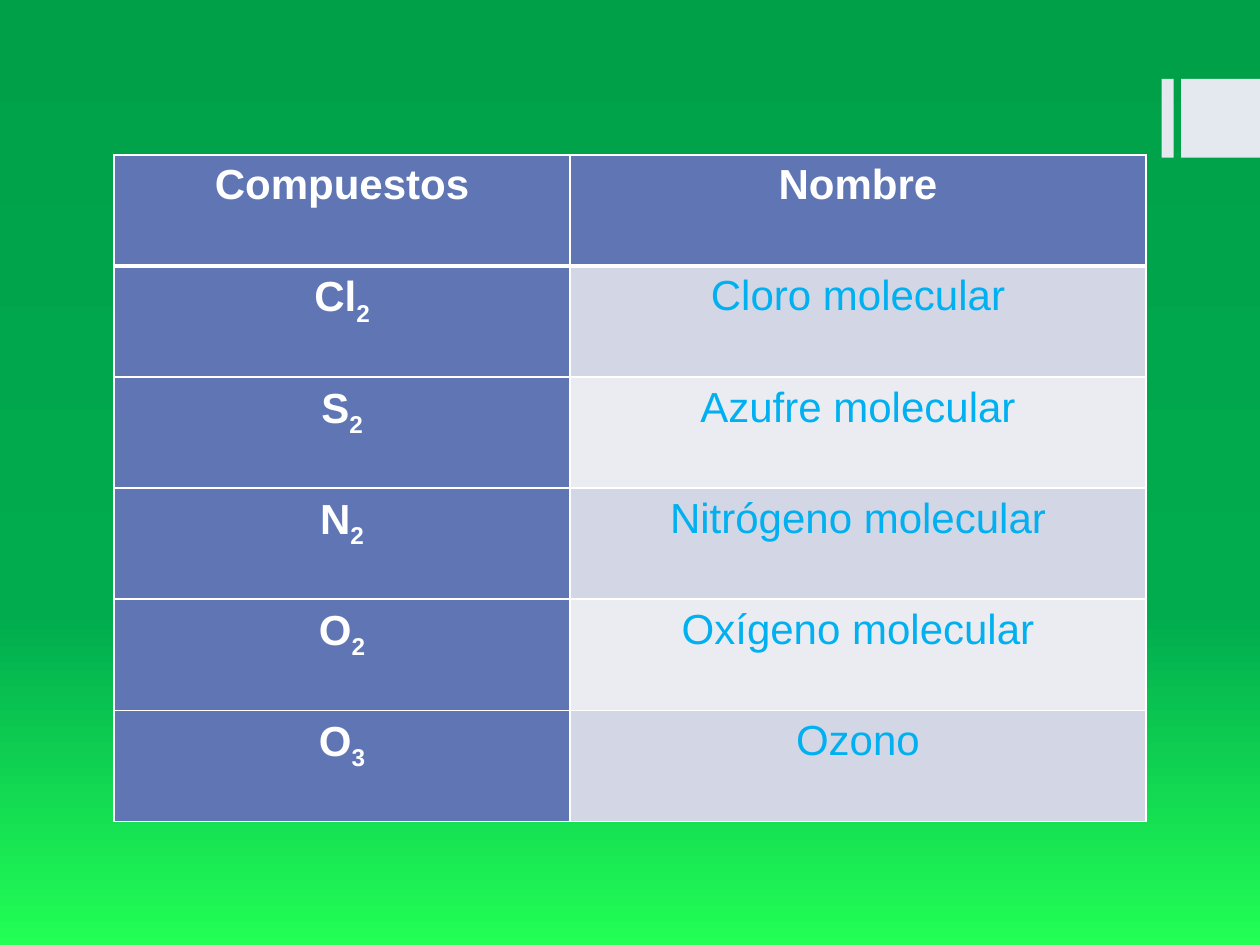
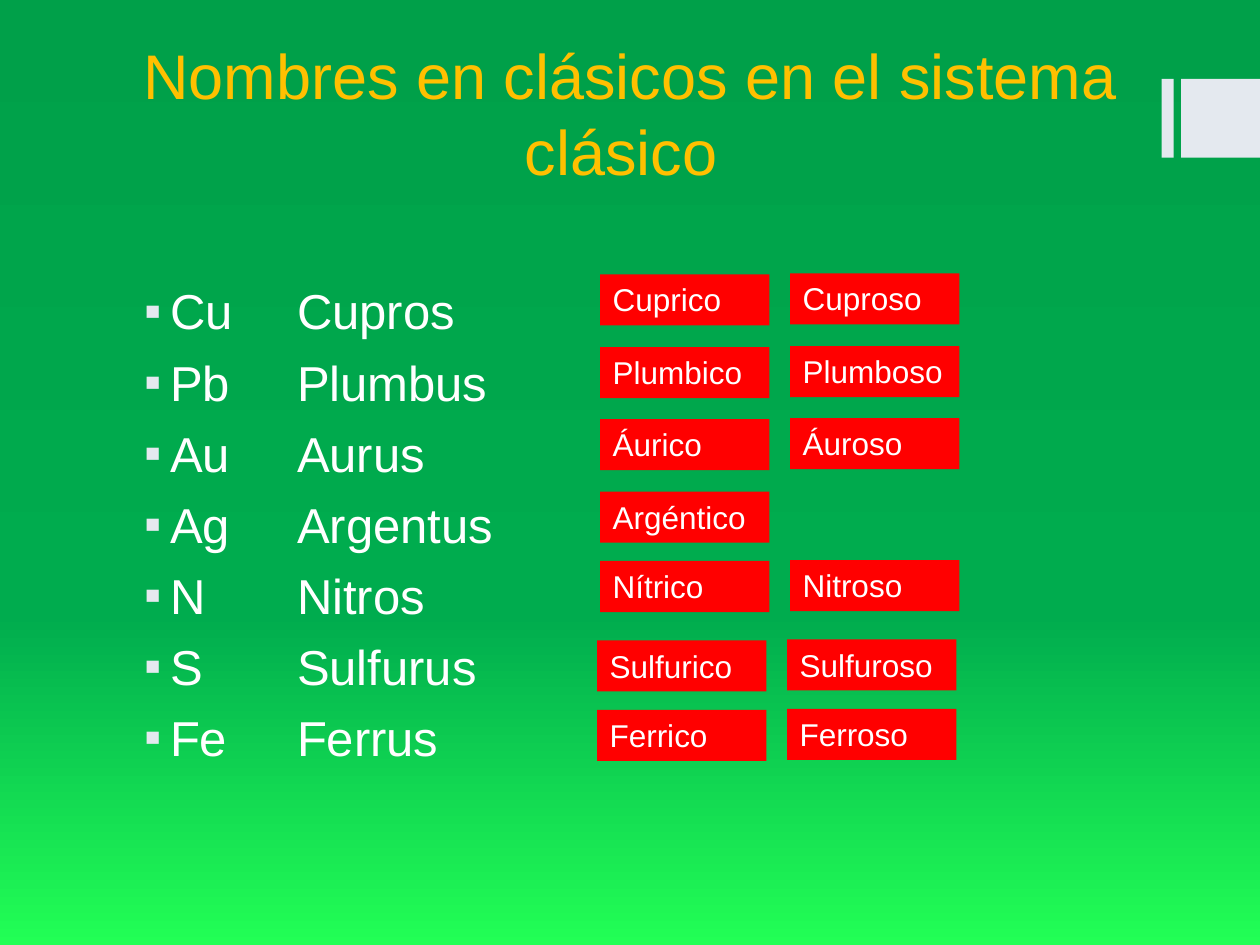
from lxml import etree
from pptx import Presentation
from pptx.dml.color import RGBColor
from pptx.enum.shapes import MSO_SHAPE
from pptx.enum.text import MSO_ANCHOR, PP_ALIGN
from pptx.oxml.ns import qn
from pptx.util import Cm, Pt

RECTANGLE = MSO_SHAPE.RECTANGLE
CENTER = PP_ALIGN.CENTER
TOP, BOTTOM = MSO_ANCHOR.TOP, MSO_ANCHOR.BOTTOM

FONT = "Arial"
WHITE = "FFFFFF"
BAND = "E4E9EF"
GOLD = "FFC000"
RED = "FF0000"
SKY = "00B0F0"
INDIGO = "6076B4"
ROW_TINTS = ("D2D6E5", "EAECF2")
BACKGROUND_STOPS = ((0, "00A049"), (65, "00AC4E"), (100, "22FF55"))

# Symbol, number of atoms, name
MOLECULES = (
    ("Cl", "2", "Cloro molecular"),
    ("S", "2", "Azufre molecular"),
    ("N", "2", "Nitrógeno molecular"),
    ("O", "2", "Oxígeno molecular"),
    ("O", "3", "Ozono"),
)

ELEMENTS = (
    ("Cu", "Cupros"),
    ("Pb", "Plumbus"),
    ("Au", "Aurus"),
    ("Ag", "Argentus"),
    ("N", "Nitros"),
    ("S", "Sulfurus"),
    ("Fe", "Ferrus"),
)

# Left and top in cm within the grid, then the -ico and -oso names
ION_ROWS = (
    (0.06, 0.02, ("Cuprico", "Cuproso")),
    (0.06, 1.49, ("Plumbico", "Plumboso")),
    (0.06, 2.94, ("Áurico", "Áuroso")),
    (0.06, 4.4, ("Argéntico",)),
    (0.06, 5.8, ("Nítrico", "Nitroso")),
    (0, 7.4, ("Sulfurico", "Sulfuroso")),
    (0, 8.8, ("Ferrico", "Ferroso")),
)


def rgb(code):
    return RGBColor.from_string(code)


def add_xml(parent, tag, **attributes):
    return etree.SubElement(parent, qn(tag), attributes)


def style(paragraph, size, color, bold=False):
    font = paragraph.font
    font.name, font.size, font.bold = FONT, Pt(size), bold
    font.color.rgb = rgb(color)


def add_rectangle(slide, left, top, width, height, color):
    rectangle = slide.shapes.add_shape(
        RECTANGLE, Cm(left), Cm(top), Cm(width), Cm(height))
    rectangle.shadow.inherit = False
    rectangle.fill.solid()
    rectangle.fill.fore_color.rgb = rgb(color)
    rectangle.line.fill.background()
    return rectangle


def add_text_frame(slide, left, top, width, height, anchor=TOP):
    frame = slide.shapes.add_textbox(
        Cm(left), Cm(top), Cm(width), Cm(height)).text_frame
    frame.word_wrap = True
    frame.vertical_anchor = anchor
    return frame


def paint_background(slide):
    fill = slide.background.fill
    fill.gradient()
    fill.gradient_angle = 270
    stops = slide.element.find(".//" + qn("a:gsLst"))
    stops.clear()
    for percent, color in BACKGROUND_STOPS:
        stop = add_xml(stops, "a:gs", pos=str(percent * 1000))
        add_xml(stop, "a:srgbClr", val=color)


def add_themed_slide(deck):
    """Add a slide with the green gradient and the two bands at the right."""
    slide = deck.slides.add_slide(deck.slide_layouts[6])
    paint_background(slide)
    for left, width in ((23.42, 0.24), (23.81, 1.59)):
        add_rectangle(slide, left, 1.59, width, 1.59, BAND)
    return slide


def border_cell(cell, bottom=1):
    properties = cell._tc.get_or_add_tcPr()
    sides = (("a:lnL", 1), ("a:lnR", 1), ("a:lnT", 1), ("a:lnB", bottom))
    for position, (tag, points) in enumerate(sides):
        line = add_xml(properties, tag, w=str(Pt(points)))
        add_xml(add_xml(line, "a:solidFill"), "a:srgbClr", val=WHITE)
        properties.insert(position, line)


def fill_cell(cell, text, fill, color, bold=False, subscript="", bottom=1):
    cell.fill.solid()
    cell.fill.fore_color.rgb = rgb(fill)
    border_cell(cell, bottom)
    cell.margin_left = cell.margin_right = Cm(0.19)
    cell.margin_top = cell.margin_bottom = 0
    paragraph = cell.text_frame.paragraphs[0]
    paragraph.alignment = CENTER
    paragraph.line_spacing = 1.15
    style(paragraph, 24, color, bold)
    paragraph.add_run().text = text
    if subscript:
        atoms = paragraph.add_run()
        atoms.text = subscript
        atoms._r.get_or_add_rPr().set("baseline", "-25000")


def add_molecule_table(slide, left, top, column_widths, row_height):
    row_count = len(MOLECULES) + 1
    table = slide.shapes.add_table(
        row_count, len(column_widths), Cm(left), Cm(top),
        Cm(sum(column_widths)), Cm(row_height * row_count)).table
    table.horz_banding = False
    for column, width in zip(table.columns, column_widths):
        column.width = Cm(width)
    for column, heading in enumerate(("Compuestos", "Nombre")):
        fill_cell(table.cell(0, column), heading, INDIGO, WHITE,
                  bold=True, bottom=3)
    for row, (symbol, atoms, name) in enumerate(MOLECULES, start=1):
        fill_cell(table.cell(row, 0), symbol, INDIGO, WHITE,
                  bold=True, subscript=atoms)
        fill_cell(table.cell(row, 1), name, ROW_TINTS[(row - 1) % 2], SKY)


def add_title(slide, text, left, top, width, height):
    title = add_text_frame(slide, left, top, width, height, BOTTOM).paragraphs[0]
    title.text = text
    title.alignment = CENTER
    style(title, 36, GOLD)


def set_bullet_and_tab(paragraph, indent, hanging, tab):
    properties = paragraph._p.get_or_add_pPr()
    properties.set("marL", str(Cm(indent)))
    properties.set("indent", str(-Cm(hanging)))
    color = add_xml(properties, "a:buClr")
    add_xml(color, "a:srgbClr", val=BAND)
    add_xml(properties, "a:buFont", typeface=FONT)
    add_xml(properties, "a:buChar", char="▪")
    tabs = add_xml(properties, "a:tabLst")
    add_xml(tabs, "a:tab", pos=str(Cm(tab)), algn="l")


def add_element_list(slide, left, top, width, height):
    frame = add_text_frame(slide, left, top, width, height)
    for index, (symbol, latin_name) in enumerate(ELEMENTS):
        element = frame.paragraphs[0] if index == 0 else frame.add_paragraph()
        element.text = f"{symbol}\t{latin_name}"
        element.space_before = Pt(7)
        set_bullet_and_tab(element, indent=0.64, hanging=0.51, tab=3.2)
        style(element, 28, WHITE)


def add_ion_grid(slide, left, top):
    column_step, column_rise = 3.83, 0.02
    for row_left, row_top, names in ION_ROWS:
        for column, name in enumerate(names):
            label = add_rectangle(
                slide, left + row_left + column * column_step,
                top + row_top - column * column_rise, 3.41, 1.03, RED)
            frame = label.text_frame
            frame.word_wrap = True
            frame.vertical_anchor = TOP
            ion = frame.paragraphs[0]
            ion.text = name
            ion.alignment = PP_ALIGN.LEFT
            style(ion, 18, WHITE)


def main():
    deck = Presentation()
    deck.slide_width, deck.slide_height = Cm(25.4), Cm(19.05)

    molecules = add_themed_slide(deck)
    add_molecule_table(molecules, 2.3, 3.12, (9.19, 11.61), 2.24)

    classic_names = add_themed_slide(deck)
    add_title(classic_names, "Nombres en clásicos en el sistema clásico ",
              2.54, 1.32, 20.32, 2.59)
    add_element_list(classic_names, 2.54, 5.54, 20.32, 11.99)
    add_ion_grid(classic_names, 12.04, 5.51)
    deck.save("out.pptx")


if __name__ == "__main__":
    main()
